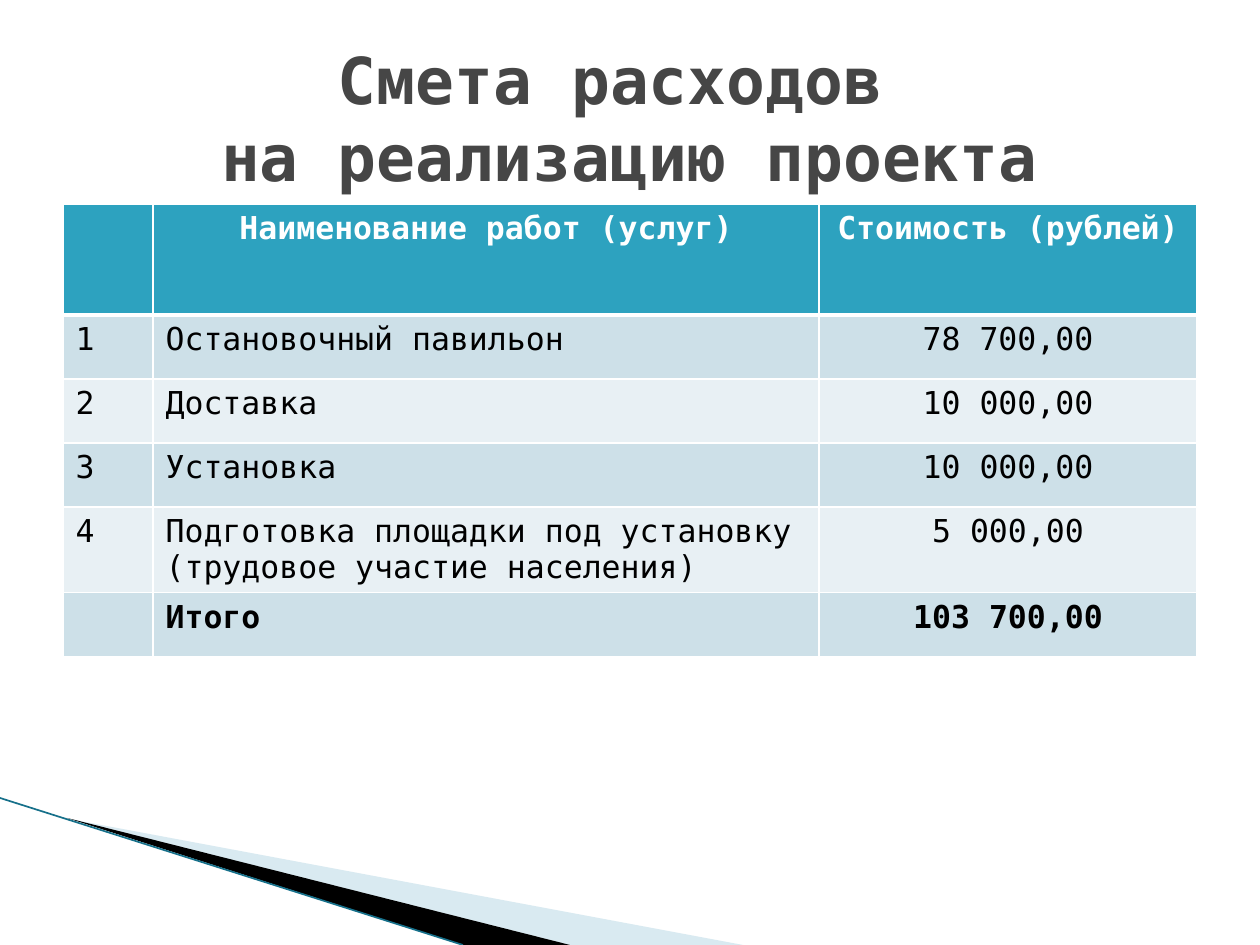
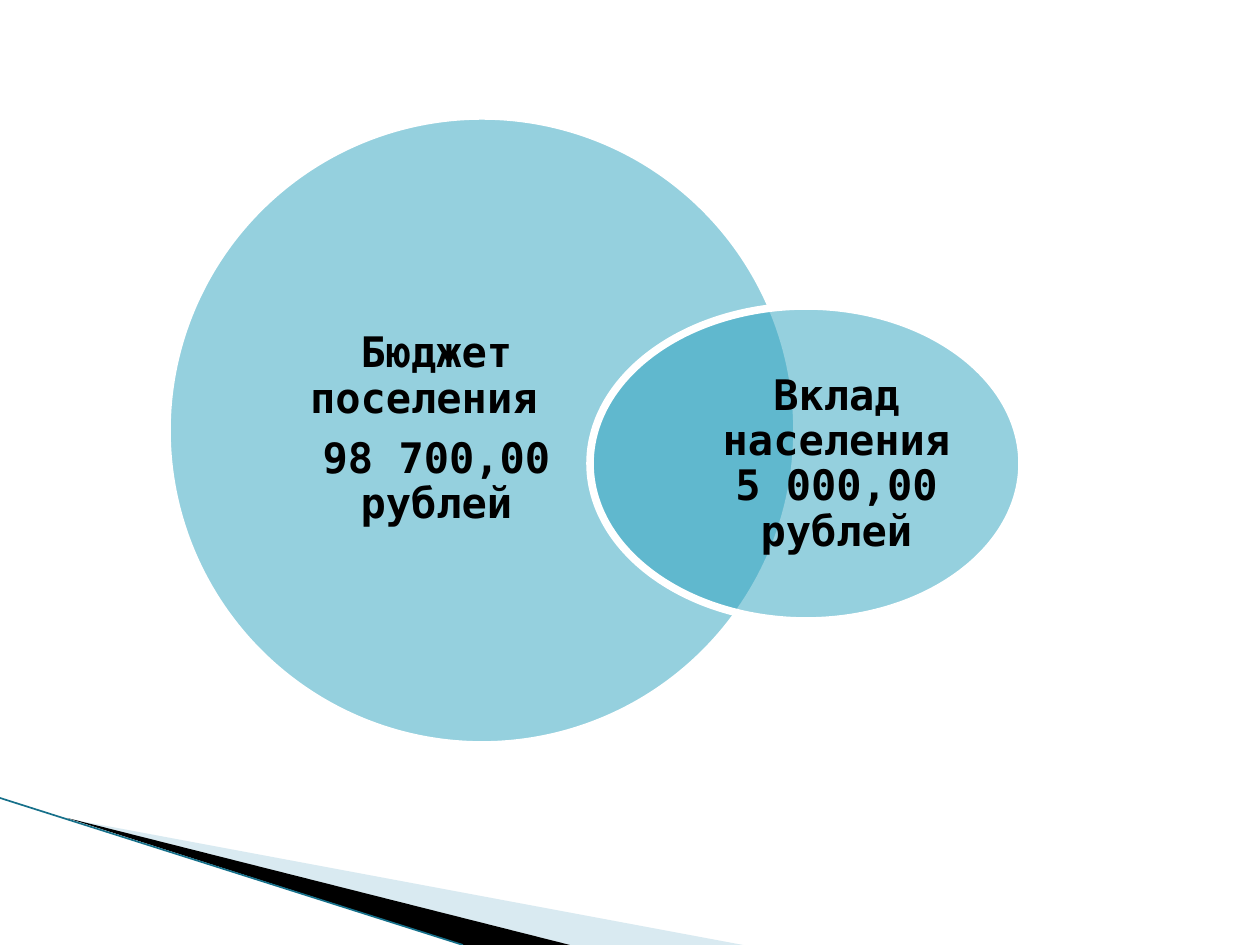
from dataclasses import dataclass

from lxml import etree
from pptx import Presentation
from pptx.dml.color import RGBColor
from pptx.enum.shapes import MSO_CONNECTOR, MSO_SHAPE
from pptx.enum.text import MSO_ANCHOR, PP_ALIGN
from pptx.oxml.ns import qn
from pptx.util import Emu, Pt

LEFT, CENTER = PP_ALIGN.LEFT, PP_ALIGN.CENTER
MIDDLE = MSO_ANCHOR.MIDDLE
OVAL = MSO_SHAPE.OVAL
STRAIGHT = MSO_CONNECTOR.STRAIGHT
EMU_PER_PX = 914400 / 126
BLANK_LAYOUT = 6


@dataclass(frozen=True)
class Theme:
    font: str = "DejaVu Sans Mono"
    white: str = "FFFFFF"
    black: str = "000000"
    title: str = "464646"
    accent: str = "2DA2BF"
    odd_row: str = "CDE0E8"
    even_row: str = "E8F0F4"
    wedge: str = "A0CBDC"
    edge: str = "16708A"
    title_size: float = 36.9
    circle_size: float = 24
    table_size: float = 18


THEME = Theme()

ESTIMATE = [
    ("", "Наименование работ (услуг)", "Стоимость (рублей)"),
    ("1", "Остановочный павильон", "78 700,00"),
    ("2", "Доставка", "10 000,00"),
    ("3", "Установка", "10 000,00"),
    ("4", "Подготовка площадки под установку (трудовое участие населения)", "5 000,00"),
    ("", "Итого", "103 700,00"),
]


def px(length):
    return Emu(round(length * EMU_PER_PX))


def rgb(color):
    return RGBColor.from_string(color)


def paint(shape, color, opacity=100):
    shape.shadow.inherit = False
    shape.fill.solid()
    shape.fill.fore_color.rgb = rgb(color)
    if opacity < 100:
        tint = shape._element.spPr.find(qn("a:solidFill"))[0]
        etree.SubElement(tint, qn("a:alpha"), val=str(opacity * 1000))


def add_span(para, text, size, color, bold):
    span = para.add_run()
    span.text = text
    span.font.name = THEME.font
    span.font.size = Pt(size)
    span.font.color.rgb = rgb(color)
    span.font.bold = bold


def add_box(page, left, top, width, height):
    box = page.shapes.add_textbox(px(left), px(top), px(width), px(height))
    frame = box.text_frame
    frame.word_wrap = True
    frame.vertical_anchor = MIDDLE
    return frame


def add_title(page, lines):
    para = add_box(page, 63, 38, 1134, 158).paragraphs[0]
    para.alignment = CENTER
    for index, line in enumerate(lines):
        if index:
            para.add_line_break()
        add_span(para, line, THEME.title_size, THEME.title, True)


def add_wedge(page, points, color, opacity=100):
    corners = [(px(x), px(y)) for x, y in points]
    builder = page.shapes.build_freeform(*corners[0])
    builder.add_line_segments(corners[1:], close=True)
    wedge = builder.convert_to_shape()
    paint(wedge, color, opacity)
    wedge.line.fill.background()


def add_corner_band(page):
    add_wedge(page, [(69, 819), (743, 945), (570, 945)], THEME.wedge, 40)
    add_wedge(page, [(67, 818), (570, 945), (463, 945)], THEME.black)
    edge = page.shapes.add_connector(STRAIGHT, px(0), px(798), px(463), px(945))
    edge.line.color.rgb = rgb(THEME.edge)
    edge.line.width = Pt(0.95)
    etree.SubElement(edge._element.spPr, qn("a:effectLst"))


def add_page(deck):
    page = deck.slides.add_slide(deck.slide_layouts[BLANK_LAYOUT])
    add_corner_band(page)
    return page


def set_borders(cell, top, bottom):
    properties = cell._tc.get_or_add_tcPr()
    widths = {"lnL": 1, "lnR": 1, "lnT": top, "lnB": bottom}
    for index, (side, width) in enumerate(widths.items()):
        border = etree.Element(qn(f"a:{side}"), w=str(Pt(width)))
        fill = etree.SubElement(border, qn("a:solidFill"))
        etree.SubElement(fill, qn("a:srgbClr"), val=THEME.white)
        properties.insert(index, border)


def row_fill(row):
    if row == 0:
        return THEME.accent
    return THEME.odd_row if row % 2 else THEME.even_row


def fill_cell(cell, text, row, column, bold):
    cell.fill.solid()
    cell.fill.fore_color.rgb = rgb(row_fill(row))
    set_borders(cell, top=3 if row == 1 else 1, bottom=3 if row == 0 else 1)
    para = cell.text_frame.paragraphs[0]
    para.alignment = CENTER if row == 0 or column == 2 else LEFT
    para.font.size = Pt(THEME.table_size)
    if text:
        color = THEME.black if row else THEME.white
        add_span(para, text, THEME.table_size, color, bold)


def add_estimate_table(page, rows):
    widths = [90, 666, 378]
    heights = [111] + [64] * (len(rows) - 1)
    table = page.shapes.add_table(
        len(rows), len(widths), px(63), px(204), px(sum(widths)), px(sum(heights))
    ).table
    table.first_row = False
    table.horz_banding = False
    for column, width in zip(table.columns, widths):
        column.width = px(width)
    for row, height in enumerate(heights):
        table.rows[row].height = px(height)
        bold = row in (0, len(rows) - 1)
        for column, text in enumerate(rows[row]):
            fill_cell(table.cell(row, column), text, row, column, bold)


def add_circle(page, left, top, width, height):
    circle = page.shapes.add_shape(OVAL, px(left), px(top), px(width), px(height))
    paint(circle, THEME.accent, 50)
    circle.line.color.rgb = rgb(THEME.white)
    circle.line.width = Pt(4.33)


def add_circle_label(page, area, lines):
    frame = add_box(page, *area)
    frame.margin_left = frame.margin_right = 0
    frame.margin_top = frame.margin_bottom = 0
    for index, line in enumerate(lines):
        para = frame.add_paragraph() if index else frame.paragraphs[0]
        para.alignment = CENTER
        para.line_spacing = 0.9
        para.space_after = Pt(8.4)
        add_span(para, line, THEME.circle_size, THEME.black, True)


def build_estimate(deck):
    page = add_page(deck)
    add_estimate_table(page, ESTIMATE)
    add_title(page, ["Смета расходов ", "на реализацию проекта"])


def build_funding(deck):
    page = add_page(deck)
    add_circle(page, 167, 116, 630, 629)
    add_circle_label(page, (255, 189, 363, 481), ["Бюджет поселения ", "98 700,00 рублей"])
    add_circle(page, 590, 306, 432, 315)
    add_circle_label(page, (712, 344, 249, 241), ["Вклад населения 5 000,00 рублей"])


def main():
    deck = Presentation()
    deck.slide_width, deck.slide_height = px(1260), px(945)
    build_estimate(deck)
    build_funding(deck)
    deck.save("out.pptx")


if __name__ == "__main__":
    main()
